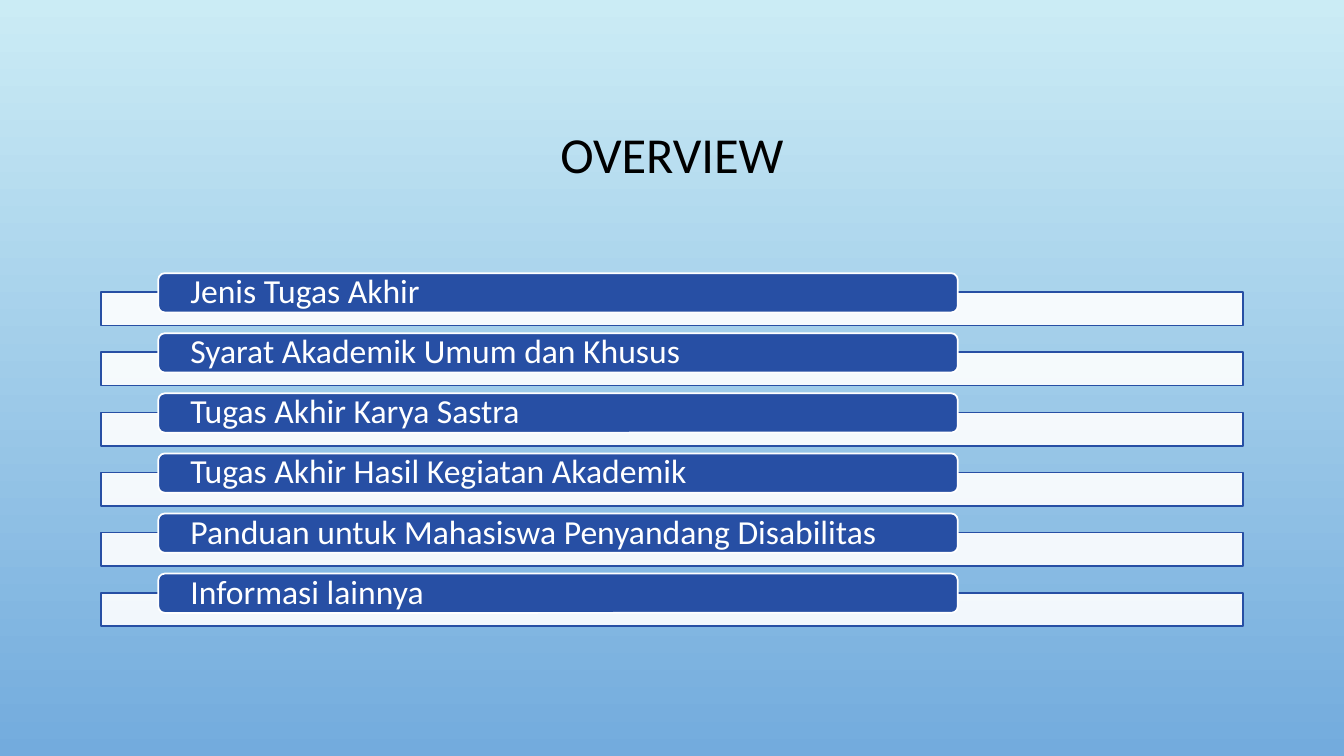
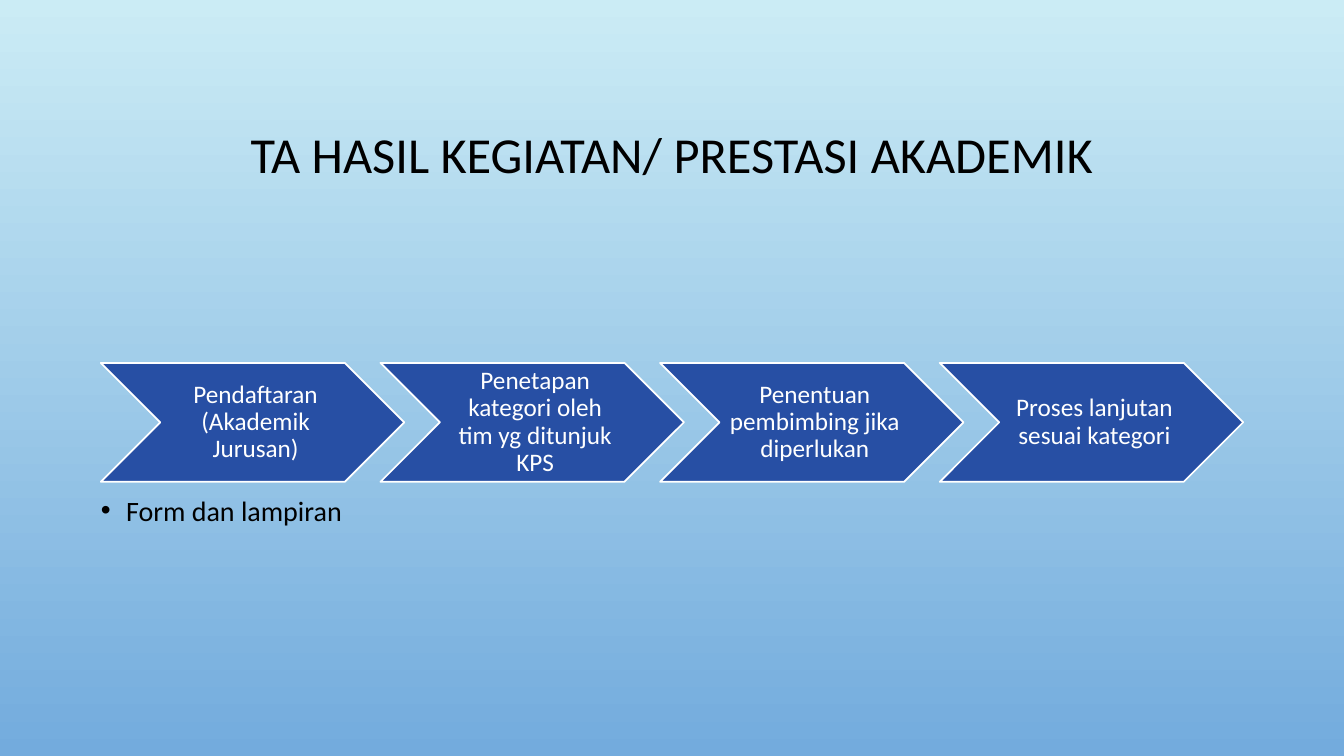
import pptx
import pptx.util
import pptx.dml.color
import pptx.enum.shapes
import pptx.enum.text
import pptx.oxml.ns
import lxml.etree

Inches = pptx.util.Inches
Pt = pptx.util.Pt
Shapes = pptx.enum.shapes.MSO_SHAPE
Align = pptx.enum.text.PP_ALIGN
Anchor = pptx.enum.text.MSO_ANCHOR

FONT = "Calibri"
COLORS = {
    "sky": "CBECF5",
    "dusk": "73ABDD",
    "blue": "274FA4",
    "white": "FFFFFF",
    "black": "000000",
}
LEFT = 1
WIDTH = 11.33

TOPICS = [
    "Jenis Tugas Akhir",
    "Syarat Akademik Umum dan Khusus",
    "Tugas Akhir Karya Sastra",
    "Tugas Akhir Hasil Kegiatan Akademik",
    "Panduan untuk Mahasiswa Penyandang Disabilitas",
    "Informasi lainnya",
]
STEPS = [
    "Pendaftaran (Akademik Jurusan)",
    "Penetapan kategori oleh tim yg ditunjuk KPS",
    "Penentuan pembimbing jika diperlukan",
    "Proses lanjutan sesuai kategori",
]


def rgb(name):
    return pptx.dml.color.RGBColor.from_string(COLORS[name])


def set_values(target, values):
    for name, value in values.items():
        setattr(target, name, value)


def add_child(parent, tag, **attributes):
    return lxml.etree.SubElement(parent, pptx.oxml.ns.qn(tag), attributes)


def set_background(master):
    fill = master.background.fill
    fill.gradient()
    fill.gradient_angle = 270
    for stop, name in zip(fill.gradient_stops, ("sky", "dusk")):
        stop.color.rgb = rgb(name)


def write_text(shape, text, size, color, align=Align.LEFT, anchor=Anchor.MIDDLE,
               insets=(0.1, 0.05, 0.1, 0.05), bullet=None):
    left, top, right, bottom = map(Inches, insets)
    frame = shape.text_frame
    set_values(frame, {
        "text": text,
        "word_wrap": True,
        "auto_size": pptx.enum.text.MSO_AUTO_SIZE.NONE,
        "vertical_anchor": anchor,
        "margin_left": left,
        "margin_top": top,
        "margin_right": right,
        "margin_bottom": bottom,
    })
    paragraph = frame.paragraphs[0]
    set_values(paragraph, {
        "alignment": align,
        "line_spacing": 0.9,
        "space_before": Pt(0),
    })
    if bullet:
        properties = paragraph._p.get_or_add_pPr()
        properties.set("marL", str(Inches(0.25)))
        properties.set("indent", str(-Inches(0.25)))
        add_child(properties, "a:buFont", typeface="Arial")
        add_child(properties, "a:buChar", char=bullet)
    font = paragraph.runs[0].font
    set_values(font, {"size": Pt(size), "name": FONT})
    font.color.rgb = rgb(color)


def add_titled_slide(presentation, title):
    slide = presentation.slides.add_slide(presentation.slide_layouts[5])
    shape = slide.shapes.title
    set_values(shape, {
        "left": Inches(LEFT),
        "top": Inches(0.68),
        "width": Inches(WIDTH),
        "height": Inches(1.75),
    })
    write_text(shape, title, 36, "black", Align.CENTER)
    return slide


def add_box(slide, kind, left, top, width, height, fill, line, opacity=100):
    shape = slide.shapes.add_shape(
        kind, Inches(left), Inches(top), Inches(width), Inches(height))
    shape.shadow.inherit = False
    shape.fill.solid()
    shape.fill.fore_color.rgb = rgb(fill)
    shape.line.color.rgb = rgb(line)
    shape.line.width = Pt(1.25)
    if opacity < 100:
        color = shape._element.spPr.find(".//" + pptx.oxml.ns.qn("a:srgbClr"))
        add_child(color, "a:alpha", val=str(opacity * 1000))
    return shape


def add_topic(slide, text, top):
    add_box(slide, Shapes.RECTANGLE, LEFT, top + 0.19, WIDTH, 0.33,
            "white", "blue", opacity=90)
    label = add_box(slide, Shapes.ROUNDED_RECTANGLE, 1.57, top, 7.93, 0.39,
                    "blue", "white")
    write_text(label, text, 24, "white", insets=(0.3, 0, 0.3, 0))


def add_step(slide, text, left):
    chevron = add_box(slide, Shapes.CHEVRON, left, 3.6, 3.01, 1.18,
                      "blue", "white")
    write_text(chevron, text, 18, "white", Align.CENTER,
               insets=(0.09, 0.03, 0.03, 0.03))


def add_note(slide, text):
    box = slide.shapes.add_textbox(
        Inches(LEFT), Inches(4.93), Inches(2.41), Inches(0.39))
    write_text(box, text, 20, "black", anchor=Anchor.TOP,
               insets=(0, 0, 0, 0), bullet="•")


def build_overview(presentation):
    slide = add_titled_slide(presentation, "OVERVIEW")
    pitch = (5.69 - 2.71) / (len(TOPICS) - 1)
    for index, topic in enumerate(TOPICS):
        add_topic(slide, topic, 2.71 + index * pitch)


def build_process(presentation):
    slide = add_titled_slide(presentation, "TA HASIL KEGIATAN/ PRESTASI AKADEMIK")
    pitch = (WIDTH - 3.01) / (len(STEPS) - 1)
    for index, step in enumerate(STEPS):
        add_step(slide, step, LEFT + index * pitch)
    add_note(slide, "Form dan lampiran")


def main():
    presentation = pptx.Presentation()
    presentation.slide_width = Inches(13.33)
    presentation.slide_height = Inches(7.5)
    set_background(presentation.slide_master)
    build_overview(presentation)
    build_process(presentation)
    presentation.save("out.pptx")


if __name__ == "__main__":
    main()
